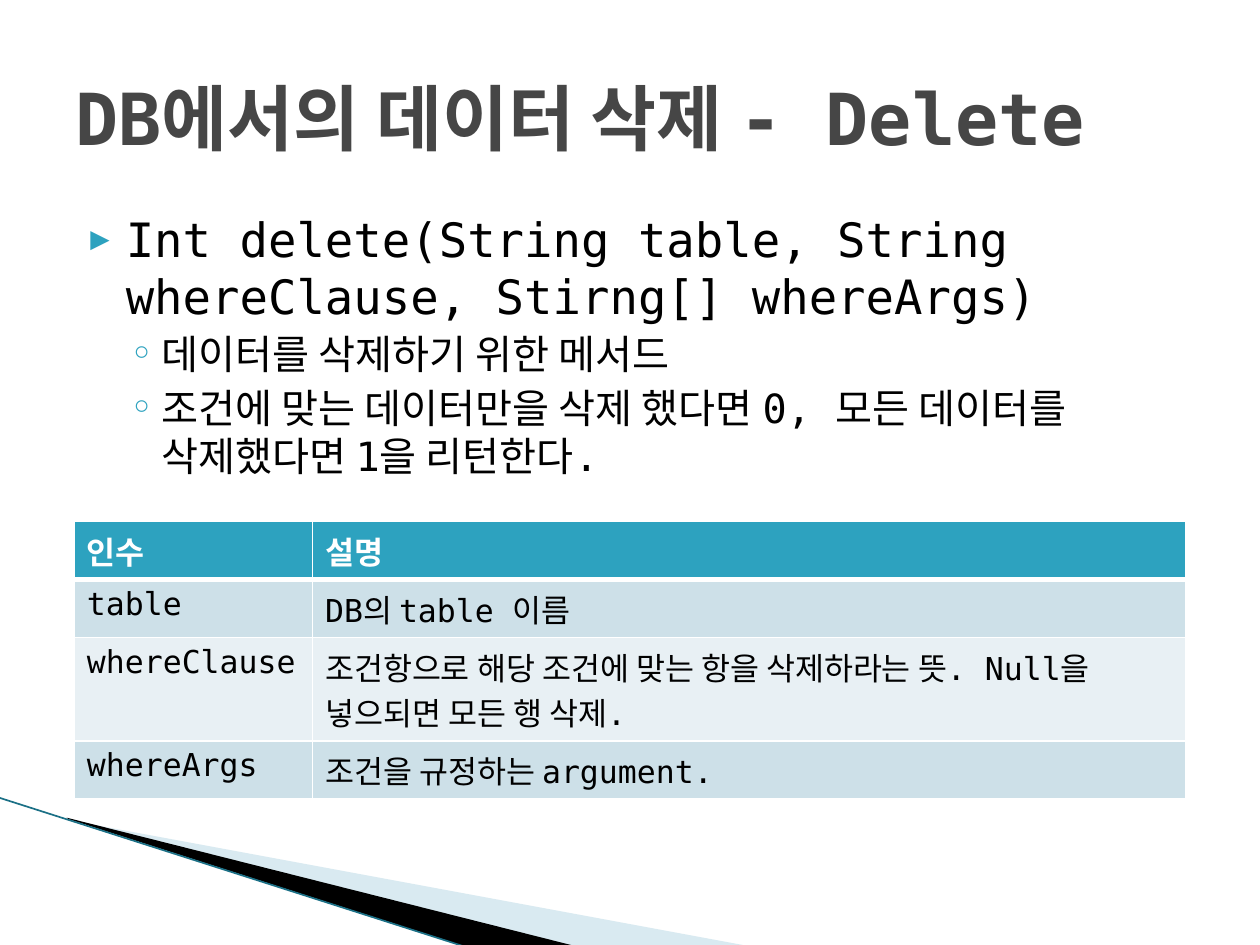
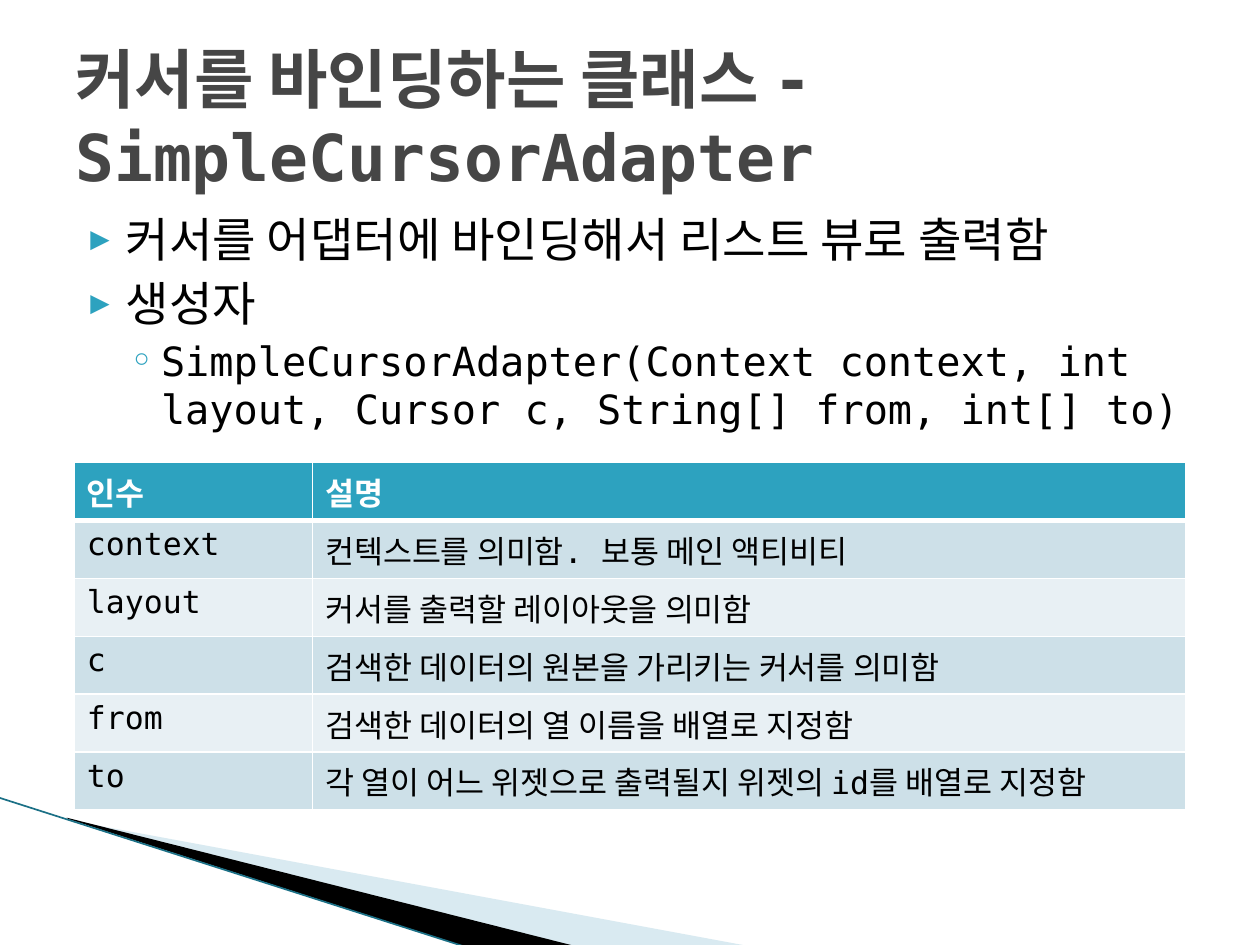
from dataclasses import dataclass

from lxml.etree import SubElement
from pptx import Presentation
from pptx.dml.color import RGBColor
from pptx.enum.shapes import MSO_CONNECTOR
from pptx.enum.text import MSO_ANCHOR
from pptx.oxml.ns import qn
from pptx.slide import Slide
from pptx.table import _Cell
from pptx.text.text import _Paragraph
from pptx.util import Inches, Pt

TEAL = RGBColor(0x2D, 0xA2, 0xBF)
DARK_TEAL = RGBColor(0x1B, 0x70, 0x86)
PALE_BLUE = RGBColor(0xA0, 0xCB, 0xDC)
ODD_ROW = RGBColor(0xCD, 0xE0, 0xE8)
EVEN_ROW = RGBColor(0xE8, 0xF0, 0xF4)
TITLE_GREY = RGBColor(0x46, 0x46, 0x46)
BLACK = RGBColor(0, 0, 0)
WHITE = RGBColor(0xFF, 0xFF, 0xFF)
FONT = "DejaVu Sans Mono"

TABLE_LEFT = Inches(0.59)
COLUMN_WIDTHS = (Inches(1.89), Inches(6.93))
ROW_HEIGHT = Inches(0.46)
TWO_LINE_ROW_HEIGHT = Inches(0.82)
LINE_CAPACITY = 42
HEADER = ("인수", "설명")


@dataclass(frozen=True)
class Level:
    bullet: str
    bullet_percent: int
    size: float
    margin: float
    hanging: float
    space_before: float


@dataclass(frozen=True)
class Wedge:
    points: tuple[tuple[float, float], ...]
    color: RGBColor
    opacity: int


@dataclass(frozen=True)
class Page:
    title: str
    title_size: float
    points: tuple[tuple[Level, str], ...]
    table_top: float
    arguments: tuple[tuple[str, str], ...]


MAIN = Level("▶", 68, 27, 0.4, 0.28, 4)
SUB = Level("◦", 100, 23, 0.68, 0.25, 3.2)

WEDGES = (
    Wedge(((0.55, 6.51), (5.95, 7.51), (4.56, 7.51), (0.55, 6.5)), PALE_BLUE, 40),
    Wedge(((0.53, 6.49), (4.57, 7.51), (3.72, 7.52), (0.54, 6.5)), BLACK, 100),
)

PAGES = (
    Page(
        "DB에서의 데이터 삭제 - Delete",
        41,
        (
            (MAIN, "Int delete(String table, String whereClause, Stirng[] whereArgs)"),
            (SUB, "데이터를 삭제하기 위한 메서드"),
            (SUB, "조건에 맞는 데이터만을 삭제 했다면 0, 모든 데이터를 삭제했다면 1을 리턴한다."),
        ),
        4.14,
        (
            ("table", "DB의 table 이름"),
            ("whereClause", "조건항으로 해당 조건에 맞는 항을 삭제하라는 뜻. Null을 넣으되면 모든 행 삭제."),
            ("whereArgs", "조건을 규정하는 argument."),
        ),
    ),
    Page(
        "커서를 바인딩하는 클래스 - SimpleCursorAdapter",
        36.9,
        (
            (MAIN, "커서를 어댑터에 바인딩해서 리스트 뷰로 출력함"),
            (MAIN, "생성자"),
            (SUB, "SimpleCursorAdapter(Context context, int layout, Cursor c, String[] from, int[] to)"),
        ),
        3.67,
        (
            ("context", "컨텍스트를 의미함. 보통 메인 액티비티"),
            ("layout", "커서를 출력할 레이아웃을 의미함"),
            ("c", "검색한 데이터의 원본을 가리키는 커서를 의미함"),
            ("from", "검색한 데이터의 열 이름을 배열로 지정함"),
            ("to", "각 열이 어느 위젯으로 출력될지 위젯의 id를 배열로 지정함"),
        ),
    ),
)


def add_run(paragraph: _Paragraph, text: str, size: float, color: RGBColor, bold: bool = False) -> None:
    run = paragraph.add_run()
    run.text = text
    run.font.name = FONT
    run.font.size = Pt(size)
    run.font.bold = bold
    run.font.color.rgb = color


def draw_corner(slide: Slide) -> None:
    for wedge in WEDGES:
        start, *rest = [(Inches(x), Inches(y)) for x, y in wedge.points]
        builder = slide.shapes.build_freeform(*start)
        builder.add_line_segments(rest)
        shape = builder.convert_to_shape()
        shape.shadow.inherit = False
        shape.line.fill.background()
        shape.fill.solid()
        shape.fill.fore_color.rgb = wedge.color
        if wedge.opacity < 100:
            color = shape._element.spPr.find(f"{qn('a:solidFill')}/{qn('a:srgbClr')}")
            SubElement(color, qn("a:alpha"), val=str(wedge.opacity * 1000))
    edge = slide.shapes.add_connector(
        MSO_CONNECTOR.STRAIGHT, Inches(-0.01), Inches(6.33), Inches(3.71), Inches(7.52)
    )
    edge.line.color.rgb = DARK_TEAL
    edge.line.width = Pt(0.95)
    SubElement(edge._element.spPr, qn("a:effectLst"))


def draw_title(slide: Slide, page: Page) -> None:
    frame = slide.shapes.add_textbox(Inches(0.5), Inches(0.3), Inches(9), Inches(1.25)).text_frame
    frame.word_wrap = True
    frame.vertical_anchor = MSO_ANCHOR.MIDDLE
    add_run(frame.paragraphs[0], page.title, page.title_size, TITLE_GREY, True)


def add_bullet(paragraph: _Paragraph, level: Level) -> None:
    properties = paragraph._p.get_or_add_pPr()
    properties.set("marL", str(Inches(level.margin)))
    properties.set("indent", str(-Inches(level.hanging)))
    color = SubElement(properties, qn("a:buClr"))
    SubElement(color, qn("a:srgbClr"), val=str(TEAL))
    SubElement(properties, qn("a:buSzPct"), val=str(level.bullet_percent * 1000))
    SubElement(properties, qn("a:buFont"), typeface=FONT)
    SubElement(properties, qn("a:buChar"), char=level.bullet)


def draw_points(slide: Slide, page: Page) -> None:
    frame = slide.shapes.add_textbox(Inches(0.5), Inches(1.62), Inches(9), Inches(4.95)).text_frame
    frame.word_wrap = True
    for index, (level, text) in enumerate(page.points):
        paragraph = frame.add_paragraph() if index else frame.paragraphs[0]
        add_bullet(paragraph, level)
        paragraph.level = int(level is SUB)
        if index:
            paragraph.space_before = Pt(level.space_before)
        add_run(paragraph, text, level.size, BLACK)


def set_borders(cell: _Cell, top: float, bottom: float) -> None:
    properties = cell._tc.get_or_add_tcPr()
    for side, width in (("L", 1), ("R", 1), ("T", top), ("B", bottom)):
        line = SubElement(properties, qn(f"a:ln{side}"), w=str(Pt(width)))
        fill = SubElement(line, qn("a:solidFill"))
        SubElement(fill, qn("a:srgbClr"), val=str(WHITE))


def draw_arguments(slide: Slide, page: Page) -> None:
    rows = (HEADER, *page.arguments)
    heights = [
        TWO_LINE_ROW_HEIGHT if len(description) > LINE_CAPACITY else ROW_HEIGHT
        for _, description in rows
    ]
    table = slide.shapes.add_table(
        len(rows), len(HEADER), TABLE_LEFT, Inches(page.table_top),
        sum(COLUMN_WIDTHS), sum(heights),
    ).table
    for column, width in zip(table.columns, COLUMN_WIDTHS):
        column.width = width
    for row_index, (texts, height) in enumerate(zip(rows, heights)):
        is_header = row_index == 0
        table.rows[row_index].height = height
        row_color = TEAL if is_header else ODD_ROW if row_index % 2 else EVEN_ROW
        for column_index, text in enumerate(texts):
            cell = table.cell(row_index, column_index)
            set_borders(cell, 3 if row_index == 1 else 1, 3 if is_header else 1)
            cell.fill.solid()
            cell.fill.fore_color.rgb = row_color
            add_run(cell.text_frame.paragraphs[0], text, 18, WHITE if is_header else BLACK, is_header)


def main() -> None:
    presentation = Presentation()
    presentation.slide_width = Inches(10)
    presentation.slide_height = Inches(7.5)
    for page in PAGES:
        slide = presentation.slides.add_slide(presentation.slide_layouts[6])
        draw_corner(slide)
        draw_points(slide, page)
        draw_title(slide, page)
        draw_arguments(slide, page)
    presentation.save("out.pptx")


if __name__ == "__main__":
    main()
